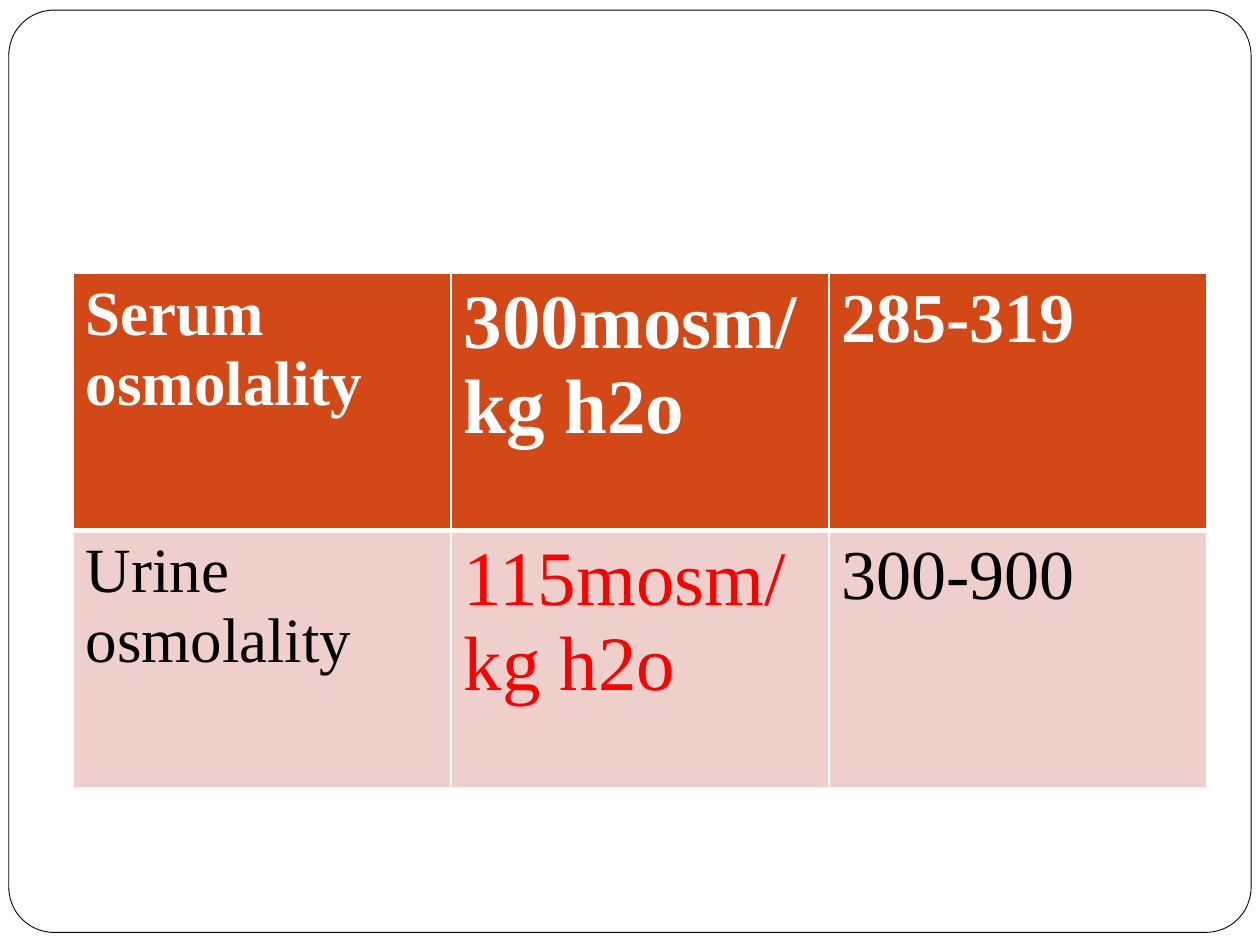
from lxml import etree
from pptx import Presentation
from pptx.dml.color import RGBColor
from pptx.enum.shapes import MSO_SHAPE as Shape
from pptx.oxml.ns import qn
from pptx.util import Inches, Pt

FONT = "Times New Roman"
SIZES = [36, 44, 40]  # one text size per column
HEADER = ["Serum osmolality", "300mosm/kg h2o", "285-319"]
URINE = ["Urine osmolality", "115mosm/\nkg h2o", "300-900"]


def rgb(color):
    return RGBColor.from_string(color)


def add_frame(slide):
    sp = slide.shapes.add_shape(Shape.ROUNDED_RECTANGLE, Inches(0.07),
                                Inches(0.08), Inches(9.86), Inches(7.32))
    sp.adjustments[0] = 0.049
    sp.shadow.inherit = False
    sp.fill.solid()
    sp.fill.fore_color.rgb = rgb("FFFFFF")
    sp.line.color.rgb = rgb("000000")
    sp.line.width = Pt(0.5)


def set_borders(cell, color, widths):
    tc_pr = cell._tc.get_or_add_tcPr()
    for side, width in widths.items():
        ln = etree.SubElement(tc_pr, qn(f"a:ln{side}"), w=str(Pt(width)))
        fill = etree.SubElement(ln, qn("a:solidFill"))
        etree.SubElement(fill, qn("a:srgbClr"), val=color)


def fill_row(row, texts, fill, colors, bold, widths):
    for cell, text, size, color in zip(row.cells, texts, SIZES, colors):
        # Borders come before the fill in the cell properties
        set_borders(cell, "FFFFFF", widths)
        cell.fill.solid()
        cell.fill.fore_color.rgb = rgb(fill)
        cell.text = text
        for p in cell.text_frame.paragraphs:
            p.font.name = FONT
            p.font.size = Pt(size)
            p.font.bold = bold
            p.font.color.rgb = rgb(color)


def add_osmolality_table(slide):
    table = slide.shapes.add_table(2, 3, Inches(0.58), Inches(2.17),
                                   Inches(9), Inches(4.08)).table
    header, urine = table.rows
    fill_row(header, HEADER, "D34817", ["FFFFFF"] * 3, True,
             {"L": 1, "R": 1, "T": 1, "B": 3})
    fill_row(urine, URINE, "EFCFCC", ["000000", "FF0000", "000000"], False,
             {"L": 1, "R": 1, "T": 3, "B": 1})


def main():
    prs = Presentation()
    prs.slide_width, prs.slide_height = Inches(10), Inches(7.5)
    slide = prs.slides.add_slide(prs.slide_layouts[6])
    add_frame(slide)
    add_osmolality_table(slide)
    prs.save("out.pptx")


if __name__ == "__main__":
    main()
